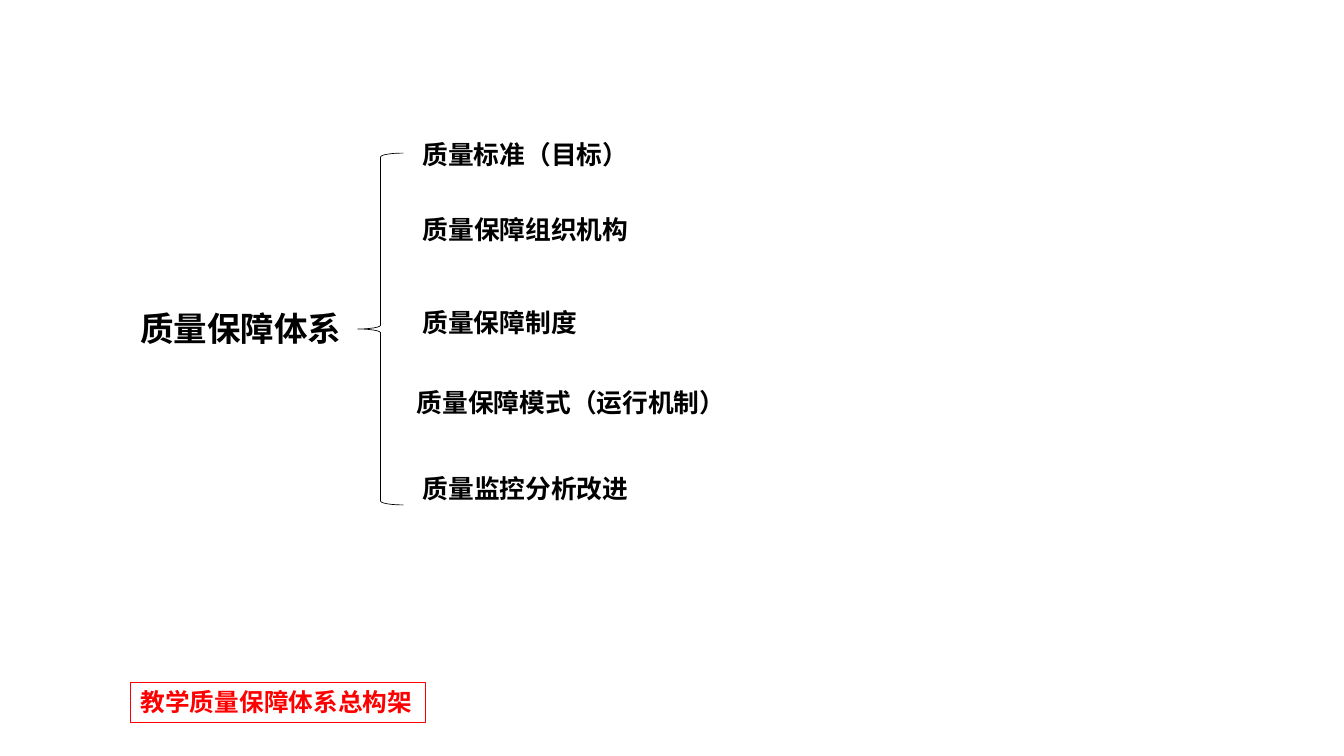
import pptx
import pptx.util
import pptx.dml.color
import pptx.enum.shapes
import pptx.enum.text

BLACK = pptx.dml.color.RGBColor(0x00, 0x00, 0x00)
RED = pptx.dml.color.RGBColor(0xFF, 0x00, 0x00)
FONT = "Calibri"
BRANCHES = [
    ("质量标准（目标）", 4.26, 1.38, 2.64),
    ("质量保障组织机构", 4.26, 2.16, 2.41),
    ("质量保障制度", 4.26, 3.12, 1.86),
    ("质量保障模式（运行机制）", 4.2, 3.94, 3.51),
    ("质量监控分析改进", 4.26, 4.83, 2.41),
]


def write_text(frame, text, *, size, color, bold=True):
    frame.word_wrap = True
    frame.auto_size = pptx.enum.text.MSO_AUTO_SIZE.SHAPE_TO_FIT_TEXT
    frame.vertical_anchor = pptx.enum.text.MSO_ANCHOR.TOP
    para = frame.paragraphs[0]
    para.alignment = pptx.enum.text.PP_ALIGN.LEFT
    span = para.add_run()
    span.text = text
    span.font.name = FONT
    span.font.size = pptx.util.Pt(size)
    span.font.bold = bold
    span.font.color.rgb = color


class Painter:
    def __init__(self, page, color):
        self.page = page
        self.color = color

    def label(self, text, left, top, width, height, size):
        area = map(pptx.util.Inches, (left, top, width, height))
        box = self.page.shapes.add_textbox(*area)
        write_text(box.text_frame, text, size=size, color=self.color)

    def outline(self, kind, left, top, width, height, color, weight):
        area = map(pptx.util.Inches, (left, top, width, height))
        shape = self.page.shapes.add_shape(kind, *area)
        shape.shadow.inherit = False
        shape.fill.background()
        shape.line.color.rgb = color
        shape.line.width = pptx.util.Pt(weight)
        return shape

    def brace(self, left, top, width, height):
        kind = pptx.enum.shapes.MSO_SHAPE.LEFT_BRACE
        self.outline(kind, left, top, width, height, self.color, 0.5)

    def caption(self, text, left, top, width, height, color):
        kind = pptx.enum.shapes.MSO_SHAPE.RECTANGLE
        frame = self.outline(kind, left, top, width, height, color, 0.75).text_frame
        write_text(frame, text, size=18.3, color=color)


def main():
    deck = pptx.Presentation()
    deck.slide_width = pptx.util.Inches(13.86)
    deck.slide_height = pptx.util.Inches(7.8)
    page = deck.slides.add_slide(deck.slide_layouts[6])
    painter = Painter(page, BLACK)
    painter.label("质量保障体系", 1.35, 3.13, 2.29, 0.52, size=24.9)
    painter.brace(3.69, 1.58, 0.47, 3.63)
    for text, left, top, width in BRANCHES:
        painter.label(text, left, top, width, 0.44, size=19.1)
    painter.caption("教学质量保障体系总构架", 1.35, 7.04, 3.04, 0.41, RED)
    deck.save("out.pptx")


if __name__ == "__main__":
    main()
